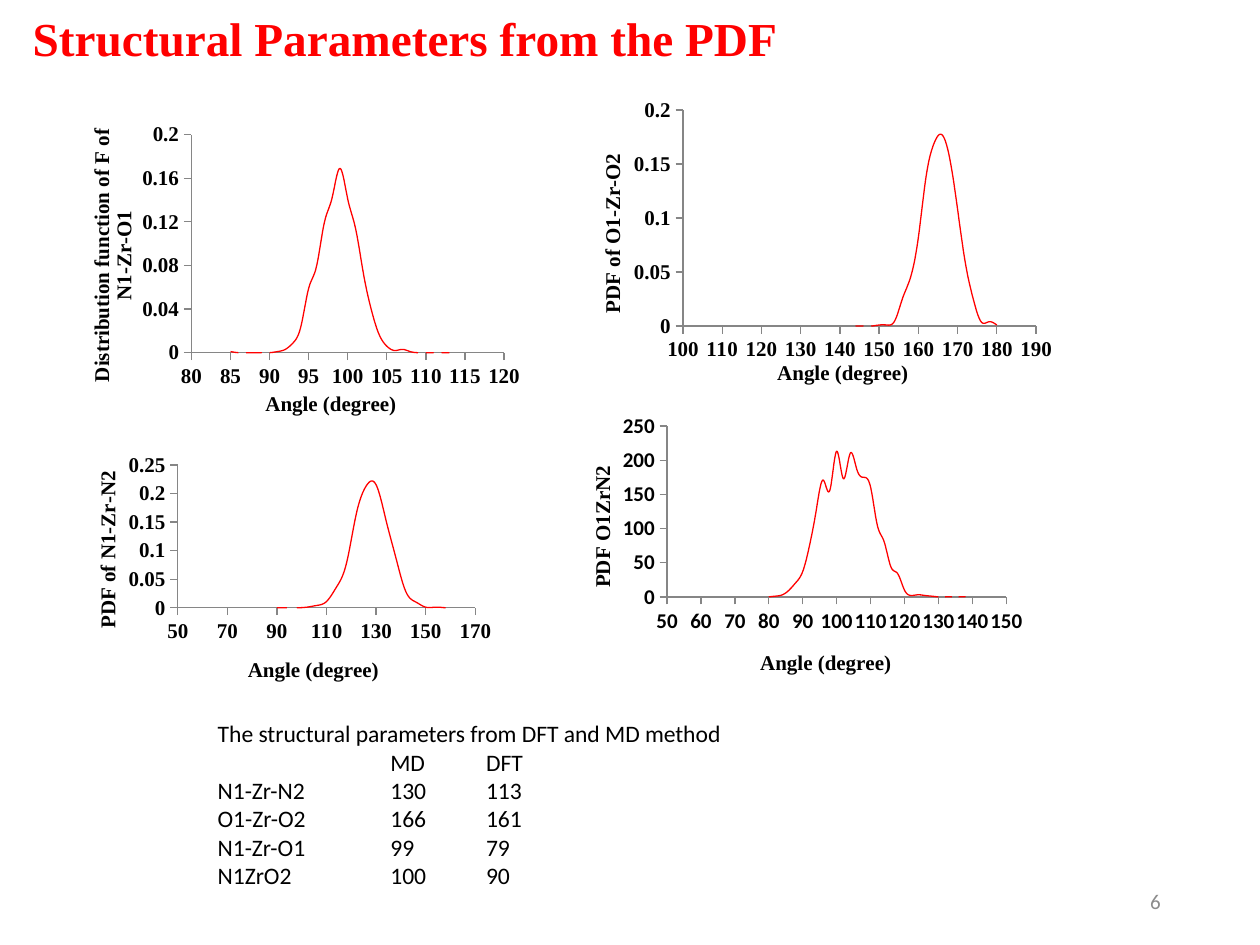
"""Build the slide of angle distribution charts with a summary of parameters."""
import pptx
import pptx.chart.data
import pptx.dml.color
import pptx.enum.chart
import pptx.enum.text
import pptx.oxml
import pptx.oxml.ns
import pptx.util
from pptx.util import Inches

COLORS = {"accent": "FF0000", "ink": "000000", "axis": "868686", "number": "8C8C8C"}
SERIF, SANS = "Times New Roman", "Calibri"
qn = pptx.oxml.ns.qn

CHARTS = [
    {
        "at": (0.49, 3.41, 3.53, 2.06), "plot": (0.261, 0.136, 0.669, 0.551),
        "title": "PDF of N1-Zr-N2", "font": SERIF,
        "angle_axis": (50, 170, 20), "density_axis": (0, 0.25, 0.05),
        "angle_title_at": (0.41, 0.86), "density_title_at": (0.065, 0.146),
        "angles": range(90, 163, 4),
        "densities": [0, 0, 0, 0.001, 0.004, 0.011, 0.036, 0.077, 0.164, 0.213, 0.215,
                      0.153, 0.087, 0.028, 0.01, 0.001, 0.001, 0, 0],
    },
    {
        "at": (0.67, 0.67, 3.54, 2.68), "plot": (0.24, 0.149, 0.701, 0.646),
        "title": "Distribution function of F of N1-Zr-O1", "font": SERIF,
        "angle_axis": (80, 120, 5), "density_axis": (0, 0.2, 0.04),
        "angles": range(85, 115),
        "densities": [0.001, 0, 0, 0, 0, 0, 0.001, 0.003, 0.009, 0.024, 0.059, 0.079,
                      0.119, 0.142, 0.169, 0.141, 0.114, 0.073, 0.04, 0.017, 0.006,
                      0.002, 0.003, 0.001, 0, 0, 0, 0, 0, 0],
    },
    {
        "at": (4.42, 3.24, 3.77, 2.29), "plot": (0.232, 0.062, 0.714, 0.592),
        "title": "PDF O1ZrN2", "font": SANS,
        "angle_axis": (50, 150, 10), "density_axis": (0, 250, 50),
        "angle_title_at": (0.42, 0.825), "density_title_at": (0.06, 0.187),
        "angles": range(80, 139, 2),
        "densities": [0, 1, 3, 10, 21, 37, 75, 127, 171, 156, 213, 173, 210, 186, 175,
                      161, 105, 81, 44, 34, 10, 2, 3, 2, 1, 0, 0, 0, 0, 0],
    },
    {
        "at": (4.21, 0.77, 4.19, 2.33), "plot": (0.289, 0.044, 0.669, 0.737),
        "title": "PDF of O1-Zr-O2", "font": SERIF,
        "angle_axis": (100, 190, 10), "density_axis": (0, 0.2, 0.05),
        "density_title_at": (0.123, 0.18),
        "angles": range(142, 181, 2),
        "densities": [0, 0, 0, 0, 0.001, 0.001, 0.005, 0.026, 0.045, 0.082, 0.139, 0.169,
                      0.177, 0.155, 0.108, 0.058, 0.025, 0.004, 0.004, 0.001],
    },
]

PARAMETERS = [
    ("", "MD", "DFT"),
    ("N1-Zr-N2", "130", "113"),
    ("O1-Zr-O2", "166", "161"),
    ("N1-Zr-O1", "99", "79"),
    ("N1ZrO2", "100", "90"),
]


def color(name):
    return pptx.dml.color.RGBColor.from_string(COLORS[name])


def style_font(font, face, size, shade, bold=False):
    font.name, font.size, font.bold = face, pptx.util.Pt(size), bold
    font.color.rgb = color(shade)


def add_run(paragraph, text, *style):
    run = paragraph.add_run()
    run.text = text
    style_font(run.font, *style)


def place(shape, left, top, width, height):
    shape.left, shape.top = Inches(left), Inches(top)
    shape.width, shape.height = Inches(width), Inches(height)


def add_title(slide, text):
    title = slide.shapes.title
    place(title, 0.16, 0.11, 6.43, 0.44)
    frame = title.text_frame
    frame.auto_size = pptx.enum.text.MSO_AUTO_SIZE.NONE
    frame.vertical_anchor = pptx.enum.text.MSO_ANCHOR.MIDDLE
    heading = frame.paragraphs[0]
    heading.alignment = pptx.enum.text.PP_ALIGN.LEFT
    heading.line_spacing = 0.9
    add_run(heading, text, SERIF, 27, "accent", True)


def set_layout(parent, position, inner=False):
    """Place a chart part by fractions of the chart's size."""
    layout = parent.find(qn("c:layout"))
    if layout is None:
        layout = parent.makeelement(qn("c:layout"), {})
        text = parent.find(qn("c:tx"))
        parent.insert(0 if text is None else parent.index(text) + 1, layout)
    manual = pptx.oxml.parse_xml(
        '<c:manualLayout xmlns:c="http://schemas.openxmlformats.org/drawingml/2006/chart"/>')
    settings = [("layoutTarget", "inner")] if inner else []
    settings += [("xMode", "edge"), ("yMode", "edge")]
    settings += zip("xywh", position)
    for tag, value in settings:
        manual.append(manual.makeelement(qn(f"c:{tag}"), {"val": str(value)}))
    layout.append(manual)


def format_axis(axis, title, scale, title_at=None, upright=False):
    axis.minimum_scale, axis.maximum_scale, axis.major_unit = scale
    axis.has_major_gridlines = axis.has_minor_gridlines = False
    axis.major_tick_mark = pptx.enum.chart.XL_TICK_MARK.OUTSIDE
    axis.minor_tick_mark = pptx.enum.chart.XL_TICK_MARK.NONE
    axis.format.line.color.rgb = color("axis")
    axis.format.line.width = pptx.util.Pt(0.75)
    add_run(axis.axis_title.text_frame.paragraphs[0], title, SERIF, 12, "ink", True)
    title_element = axis.axis_title._element
    if upright:
        body = title_element.find(".//" + qn("a:bodyPr"))
        body.set("rot", "-5400000")
        body.set("vert", "horz")
    if title_at:
        set_layout(title_element, title_at)


def add_distribution(slide, content):
    data = pptx.chart.data.XyChartData()
    curve_data = data.add_series("Series 1")
    for angle, density in zip(content["angles"], content["densities"]):
        curve_data.add_data_point(angle, density)
    chart = slide.shapes.add_chart(
        pptx.enum.chart.XL_CHART_TYPE.XY_SCATTER_SMOOTH_NO_MARKERS,
        *map(Inches, content["at"]), data).chart
    chart.has_legend = chart.has_title = False
    style_font(chart.font, content["font"], 12, "ink", True)
    format_axis(chart.category_axis, "Angle (degree)", content["angle_axis"],
                content.get("angle_title_at"))
    format_axis(chart.value_axis, content["title"], content["density_axis"],
                content.get("density_title_at"), upright=True)
    plot = chart.plots[0]
    plot.vary_by_categories = False
    curve = plot.series[0]
    curve.format.line.color.rgb = color("accent")
    curve.format.line.width = pptx.util.Pt(0.75)
    curve._element.find(qn("c:smooth")).set("val", "1")
    set_layout(chart._chartSpace.find(".//" + qn("c:plotArea")), content["plot"], inner=True)


def set_tabs(paragraph, *positions):
    properties = paragraph._p.get_or_add_pPr()
    tabs = properties.makeelement(qn("a:tabLst"), {})
    for position in positions:
        tabs.append(tabs.makeelement(
            qn("a:tab"), {"pos": str(Inches(position)), "algn": "l"}))
    properties.append(tabs)


def add_parameters(slide):
    frame = slide.shapes.add_textbox(*map(Inches, (1.63, 5.66, 4.34, 1.46))).text_frame
    frame.word_wrap = False
    frame.auto_size = pptx.enum.text.MSO_AUTO_SIZE.SHAPE_TO_FIT_TEXT
    add_run(frame.paragraphs[0], "The structural parameters from DFT and MD method",
            SANS, 13.5, "ink")
    for row in PARAMETERS:
        line = frame.add_paragraph()
        set_tabs(line, 1.37, 2.13)
        add_run(line, "\t".join(row), SANS, 13.5, "ink")


def add_slide_number(slide, number):
    frame = slide.shapes.add_textbox(*map(Inches, (7.06, 6.95, 2.25, 0.4))).text_frame
    frame.word_wrap = True
    frame.vertical_anchor = pptx.enum.text.MSO_ANCHOR.MIDDLE
    frame.paragraphs[0].alignment = pptx.enum.text.PP_ALIGN.RIGHT
    add_run(frame.paragraphs[0], number, SANS, 12, "number")


def main():
    deck = pptx.Presentation()
    deck.slide_width, deck.slide_height = Inches(10), Inches(7.5)
    slide = deck.slides.add_slide(deck.slide_layouts[5])
    add_title(slide, "Structural Parameters from the PDF")
    add_slide_number(slide, "6")
    for content in CHARTS:
        add_distribution(slide, content)
    add_parameters(slide)
    deck.save("out.pptx")


if __name__ == "__main__":
    main()
